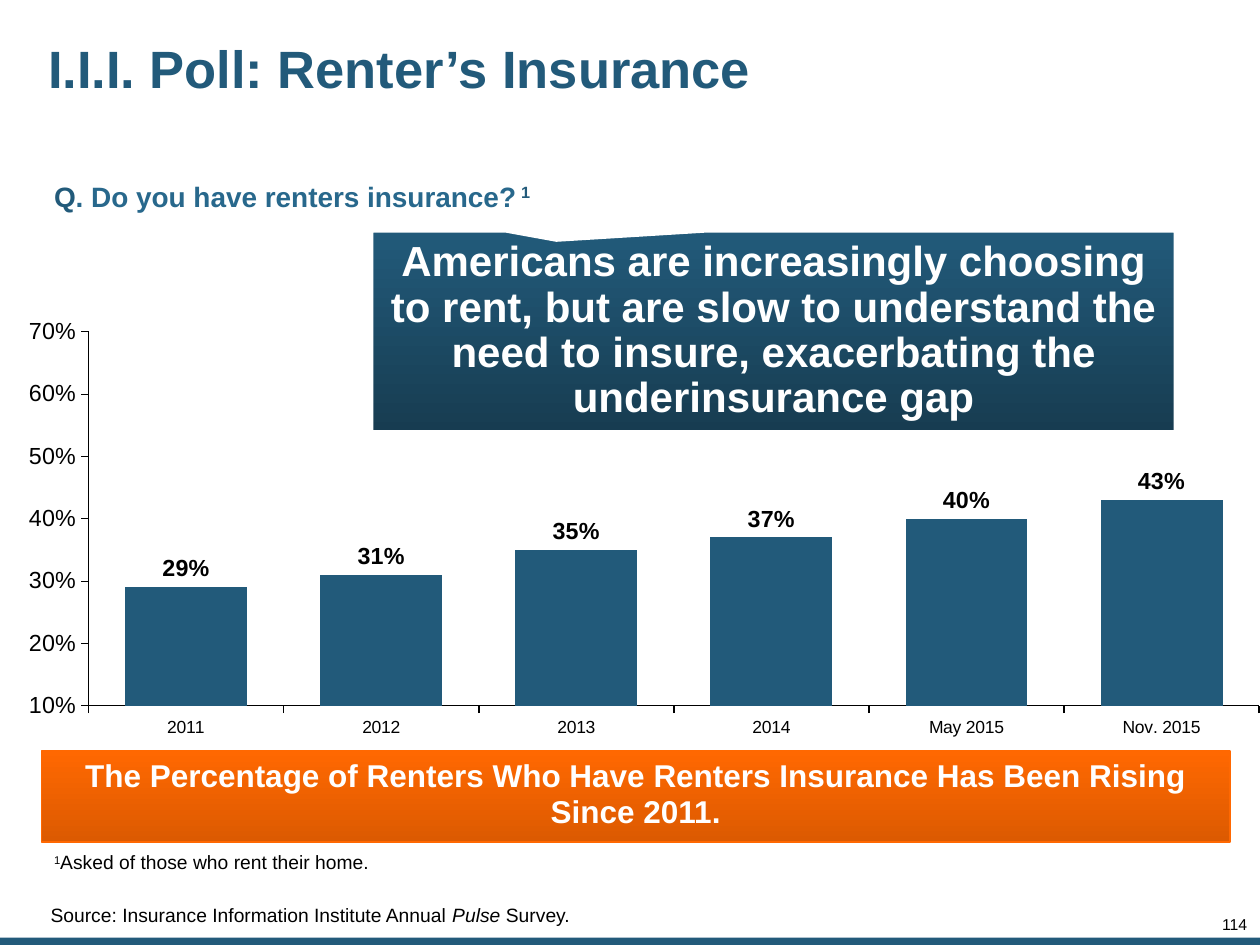
from lxml.etree import SubElement
from pptx import Presentation
from pptx.chart.data import CategoryChartData as ChartData
from pptx.dml.color import RGBColor as RGB
from pptx.enum.chart import XL_CHART_TYPE as CHART, XL_LABEL_POSITION as LABEL, XL_TICK_MARK as TICK
from pptx.enum.shapes import MSO_SHAPE as SHAPE
from pptx.enum.text import MSO_ANCHOR as ANCHOR, PP_ALIGN as ALIGN
from pptx.oxml.ns import qn
from pptx.util import Cm, Pt

THEME = {
    "font": "Arial",
    "blue": "225A7A", "mid": "28688C", "navy": "173C51",
    "orange": "FF6801", "rust": "DC5A01", "white": "FFFFFF", "black": "000000",
    "title": 30, "callout": 24, "banner": 18, "question": 16,
    "data": 13.3, "note": 11, "category": 10, "page": 9,
}

POLL = [("2011", 0.29), ("2012", 0.31), ("2013", 0.35),
        ("2014", 0.37), ("May 2015", 0.40), ("Nov. 2015", 0.43)]
CHART_BOX = (0.28, 6.38, 25.12, 10.19)
PLOT = {"x": 0.06, "y": 0.03, "w": 0.94, "h": 0.74}

TEXTS = [
    dict(box=(23.9, 18.49, 1.24, 0.33), runs=[("114", {})], size="page",
         align=ALIGN.RIGHT, spacing=0.85, inset=(0, 0, 0, 0)),
    dict(box=(0.84, 0.25, 20.55, 2.39), runs=[("I.I.I. Poll: Renter’s Insurance", {})],
         size="title", color="blue", bold=True, spacing=0.9, anchor=ANCHOR.MIDDLE),
    dict(box=(0, 18.26, 23.98, 0.79), size="note", spacing=0.85,
         runs=[("Source: Insurance Information Institute Annual ", {}),
               ("Pulse", {"italic": True}), (" Survey.", {})],
         anchor=ANCHOR.BOTTOM, inset=(1.02, 0, 0, 0.38)),
    dict(box=(0.84, 3.48, 10.26, 2.31), size="question", color=None, bold=True,
         runs=[("Q", {"color": "blue"}),
               (". Do you have renters insurance?", {"color": "mid"}),
               (" 1", {"color": "blue", "raised": True})],
         inset=(0.25, 0.13, 0.25, 0.13), wrap=False),
    dict(box=(0.84, 17.09, 12.7, 0.66), size="note", spacing=0.85,
         runs=[("1", {"raised": True}), ("Asked of those who rent their home.", {})],
         inset=(0.25, 0.13, 0.25, 0.13)),
]

BANNER = dict(
    box=(0.84, 15.14, 23.95, 1.83), shape=SHAPE.RECTANGLE,
    fill=("orange", "rust"), line=("orange", 1),
    text=dict(runs=[("The Percentage of Renters Who Have Renters Insurance "
                     "Has Been Rising Since 2011.", {})],
              size="banner", spacing=0.95, inset=(0.25, 0.13, 0.25, 0.18)))
CALLOUT = dict(
    box=(7.49, 4.65, 16.21, 4.06), shape=SHAPE.RECTANGULAR_CALLOUT,
    fill=("blue", "navy"), line=("white", 2.25), adjust=(-0.27, -0.454),
    text=dict(runs=[("Americans are increasingly choosing to rent, but are slow to "
                     "understand the need to insure, exacerbating the underinsurance gap", {})],
              size="callout", spacing=0.9, inset=(0.25, 0.25, 0.25, 0.25)))


def rgb(name):
    return RGB.from_string(THEME[name])


def place(box):
    return [Cm(v) for v in box]


def style(font, size, color=None, bold=False):
    font.name, font.size, font.bold = THEME["font"], Pt(THEME[size]), bold
    if color:
        font.color.rgb = rgb(color)


def write(tf, runs, size, color="black", bold=False, align=ALIGN.LEFT, spacing=1.0,
          anchor=ANCHOR.TOP, inset=(0.13, 0.13, 0.13, 0.13), wrap=True):
    tf.word_wrap, tf.vertical_anchor = wrap, anchor
    tf.margin_left, tf.margin_top, tf.margin_right, tf.margin_bottom = place(inset)
    p = tf.paragraphs[0]
    p.alignment, p.line_spacing = align, spacing
    style(p.font, size, color, bold)
    for text, extra in runs:
        r = p.add_run()
        r.text = text
        if "color" in extra:
            r.font.color.rgb = rgb(extra["color"])
        if "italic" in extra:
            r.font.italic = True
        if "raised" in extra:
            r.font._element.set("baseline", "30000")


def add_panel(s, box, shape, fill, line, text, adjust=()):
    sp = s.shapes.add_shape(shape, *place(box))
    sp.shadow.inherit = False
    for i, value in enumerate(adjust):
        sp.adjustments[i] = value
    sp.fill.gradient()
    sp.fill.gradient_angle = 270
    for stop, color in zip(sp.fill.gradient_stops, fill):
        stop.color.rgb = rgb(color)
    sp.line.color.rgb, sp.line.width = rgb(line[0]), Pt(line[1])
    write(sp.text_frame, color="white", bold=True, align=ALIGN.CENTER,
          anchor=ANCHOR.MIDDLE, **text)


def set_plot_area(chart):
    area = chart._chartSpace.chart.plotArea
    for old in area.findall(qn("c:layout")):
        area.remove(old)
    layout = SubElement(area, qn("c:layout"))
    area.insert(0, layout)
    manual = SubElement(layout, qn("c:manualLayout"))
    settings = {"layoutTarget": "inner", "xMode": "edge", "yMode": "edge", **PLOT}
    for tag, value in settings.items():
        SubElement(manual, qn("c:" + tag)).set("val", str(value))


def add_poll_chart(s):
    data = ChartData(number_format="0%")
    data.categories = [name for name, _ in POLL]
    data.add_series("Series 1", [value for _, value in POLL])
    chart = s.shapes.add_chart(CHART.COLUMN_CLUSTERED, *place(CHART_BOX), data).chart
    chart.has_legend = chart.has_title = False
    style(chart.font, "data", "black")
    set_plot_area(chart)

    for axis, size, width in ((chart.category_axis, "category", 0.95),
                              (chart.value_axis, "data", 0.25)):
        axis.has_major_gridlines = False
        axis.major_tick_mark, axis.minor_tick_mark = TICK.OUTSIDE, TICK.NONE
        axis.format.line.color.rgb, axis.format.line.width = rgb("black"), Pt(width)
        style(axis.tick_labels.font, size, "black")
    values = chart.value_axis
    values.minimum_scale, values.maximum_scale, values.major_unit = 0.1, 0.7, 0.1
    values.tick_labels.number_format = "0%"
    values.tick_labels.number_format_is_linked = False

    plot = chart.plots[0]
    plot.gap_width, plot.vary_by_categories = 60, False
    bars = plot.series[0]
    bars.format.fill.solid()
    bars.format.fill.fore_color.rgb = rgb("blue")
    labels = bars.data_labels
    labels.show_value, labels.position = True, LABEL.OUTSIDE_END
    labels.number_format, labels.number_format_is_linked = "0%", False
    style(labels.font, "data", "black", True)


def main():
    prs = Presentation()
    prs.slide_width, prs.slide_height = Cm(25.4), Cm(19.05)
    s = prs.slides.add_slide(prs.slide_layouts[6])

    strip = s.shapes.add_shape(SHAPE.RECTANGLE, *place((0, 18.9, 25.4, 0.15)))
    strip.shadow.inherit = False
    strip.fill.solid()
    strip.fill.fore_color.rgb = rgb("blue")
    strip.line.fill.background()

    add_poll_chart(s)
    add_panel(s, **BANNER)
    for item in TEXTS:
        box, text = item["box"], {k: v for k, v in item.items() if k != "box"}
        write(s.shapes.add_textbox(*place(box)).text_frame, **text)
    add_panel(s, **CALLOUT)
    prs.save("out.pptx")


if __name__ == "__main__":
    main()
